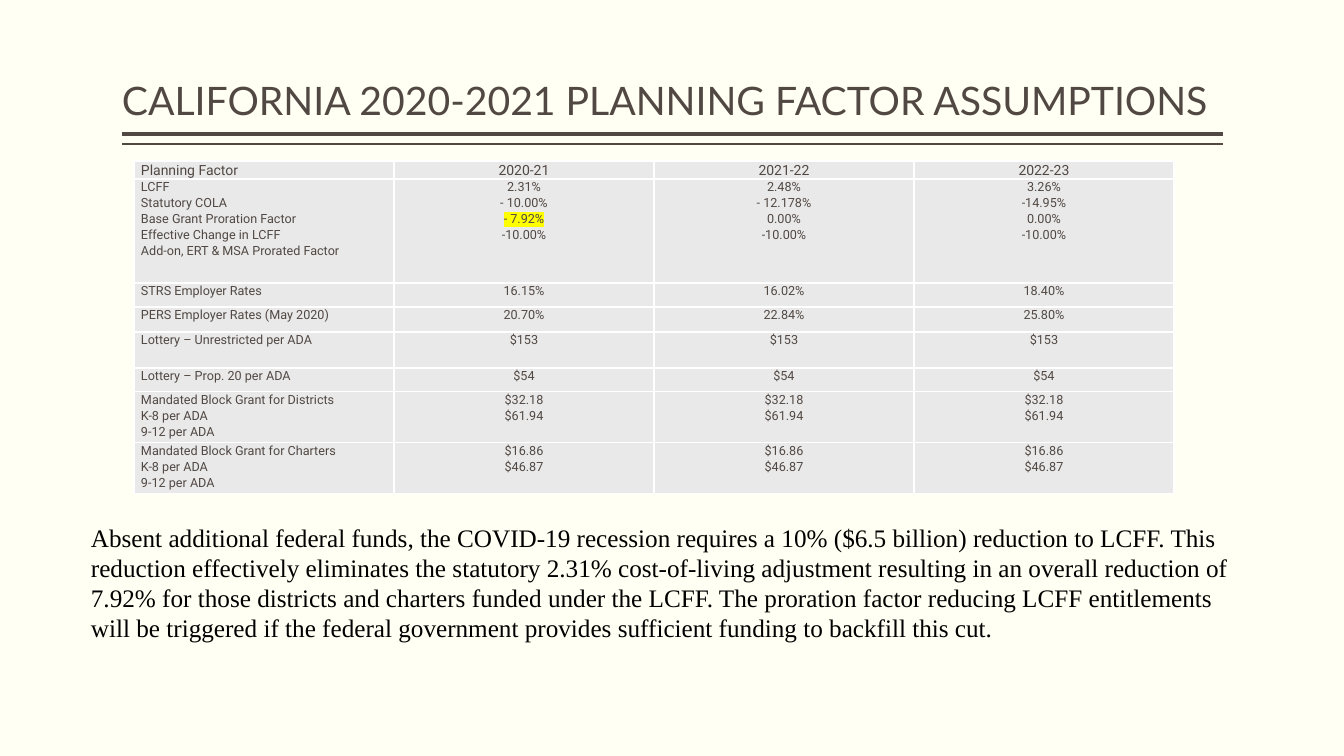
from dataclasses import dataclass

import pptx
import pptx.dml.color
import pptx.enum.shapes
import pptx.enum.text
import pptx.oxml
import pptx.oxml.ns
import pptx.util

SCALE = 12192000 / 1344  # EMU per px
COLORS = {"page": "FFFFF3", "ink": "514843", "cell": "E9E9E9",
          "border": "FFFFFF", "mark": "FFFF00", "body": "000000"}
ALIGN = pptx.enum.text.PP_ALIGN
ANCHOR = pptx.enum.text.MSO_ANCHOR
AUTO = pptx.enum.text.MSO_AUTO_SIZE


@dataclass
class Style:
    font: str
    size: int
    color: str
    spacing: float = 1.0


@dataclass
class TextBox:
    box: tuple[int, int, int, int]
    text: str
    style: Style
    frame: dict


@dataclass
class Rule:
    y: int
    width: int


@dataclass
class Row:
    height: int
    label: str
    values: list[str]
    size: int = 9


def px(n: int) -> pptx.util.Emu:
    return pptx.util.Emu(round(n * SCALE))


def rgb(name: str) -> pptx.dml.color.RGBColor:
    return pptx.dml.color.RGBColor.from_string(COLORS[name])


def set_all(obj, values: dict) -> None:
    for name, value in values.items():
        setattr(obj, name, value)


def solid_xml(tag: str, color: str, attrs: str = ""):
    ns = pptx.oxml.ns.nsdecls("a")
    return pptx.oxml.parse_xml(
        f'<a:{tag} {ns} {attrs}><a:solidFill><a:srgbClr val="{COLORS[color]}"/>'
        f'</a:solidFill></a:{tag}>')


def highlight(r) -> None:
    mark = pptx.oxml.parse_xml(
        f'<a:highlight {pptx.oxml.ns.nsdecls("a")}>'
        f'<a:srgbClr val="{COLORS["mark"]}"/></a:highlight>')
    r.font.fill._xPr.find(pptx.oxml.ns.qn("a:latin")).addprevious(mark)


def write(tf, text: str, style: Style, align=ALIGN.LEFT) -> None:
    for i, line in enumerate(text.split("\n")):
        p = tf.paragraphs[0] if i == 0 else tf.add_paragraph()
        set_all(p, {"alignment": align, "line_spacing": style.spacing})
        r = p.add_run()
        r.text = line
        set_all(r.font, {"name": style.font, "size": pptx.util.Pt(style.size)})
        r.font.color.rgb = rgb(style.color)
        if line == MARKED:
            highlight(r)


def add_text(s, item: TextBox) -> None:
    tf = s.shapes.add_textbox(*map(px, item.box)).text_frame
    set_all(tf, {"word_wrap": True, **item.frame})
    write(tf, item.text, item.style)


def add_rule(s, rule: Rule) -> None:
    sp = s.shapes.add_connector(pptx.enum.shapes.MSO_CONNECTOR.STRAIGHT,
                                px(1223), px(rule.y), px(122), px(rule.y))
    sp.line.color.rgb = rgb("ink")
    sp.line.width = pptx.util.Pt(rule.width)
    sp._element.spPr.append(pptx.oxml.parse_xml(
        f'<a:effectLst {pptx.oxml.ns.nsdecls("a")}/>'))


def add_factor_table(s, rows: list[Row]) -> None:
    height = sum(row.height for row in rows)
    table = s.shapes.add_table(len(rows), 4, px(134), px(161),
                               px(4 * COLUMN), px(height)).table
    set_all(table, {"first_row": False, "horz_banding": False})
    for column in table.columns:
        column.width = px(COLUMN)
    for i, row in enumerate(rows):
        table.rows[i].height = px(row.height)
        style = Style("Roboto", row.size, "ink", 1.07)
        for j, text in enumerate([row.label, *row.values]):
            cell = table.cell(i, j)
            set_all(cell, {"margin_left": px(7), "margin_right": px(7),
                           "margin_top": 0, "margin_bottom": 0})
            tc_pr = cell._tc.get_or_add_tcPr()
            for side in "LRTB":
                tc_pr.append(solid_xml(f"ln{side}", "border", 'w="12700"'))
            cell.fill.solid()
            cell.fill.fore_color.rgb = rgb("cell")
            write(cell.text_frame, text, style, ALIGN.CENTER if j else ALIGN.LEFT)


COLUMN = 260
MARKED = "- 7.92%"

TITLE = TextBox(
    (122, 8, 1101, 121), "CALIFORNIA 2020-2021 PLANNING FACTOR ASSUMPTIONS",
    Style("Lato", 28, "ink", 0.9),
    {"vertical_anchor": ANCHOR.BOTTOM, "margin_left": 0, "margin_right": 0})

RULES = [Rule(134, 3), Rule(144, 1)]

ROWS = [
    Row(18, "Planning Factor", ["2020-21", "2021-22", "2022-23"], 10),
    Row(104, "LCFF\nStatutory COLA\nBase Grant Proration Factor\n"
        "Effective Change in LCFF\nAdd-on, ERT & MSA Prorated Factor",
        [f"2.31%\n- 10.00%\n{MARKED}\n-10.00%",
         "2.48%\n- 12.178%\n0.00%\n-10.00%",
         "3.26%\n-14.95%\n0.00%\n-10.00%"]),
    Row(24, "STRS Employer Rates", ["16.15%", "16.02%", "18.40%"]),
    Row(25, "PERS Employer Rates (May 2020)", ["20.70%", "22.84%", "25.80%"]),
    Row(36, "Lottery – Unrestricted per ADA", ["$153"] * 3),
    Row(24, "Lottery – Prop. 20 per ADA", ["$54"] * 3),
    *(Row(51, f"Mandated Block Grant for {group}\nK-8 per ADA\n9-12 per ADA",
          [amounts] * 3)
      for group, amounts in [("Districts", "$32.18\n$61.94"),
                             ("Charters", "$16.86\n$46.87")]),
]

SUMMARY = TextBox(
    (81, 517, 1182, 132),
    "Absent additional federal funds, the COVID-19 recession requires a 10% "
    "($6.5 billion) reduction to LCFF. This reduction effectively eliminates "
    "the statutory 2.31% cost-of-living adjustment resulting in an overall "
    "reduction of 7.92% for those districts and charters funded under the "
    "LCFF. The proration factor reducing LCFF entitlements will be triggered "
    "if the federal government provides sufficient funding to backfill this cut.",
    Style("Times New Roman", 18, "body"),
    {"auto_size": AUTO.SHAPE_TO_FIT_TEXT})


def main() -> None:
    prs = pptx.Presentation()
    set_all(prs, {"slide_width": px(1344), "slide_height": px(756)})
    s = prs.slides.add_slide(prs.slide_layouts[6])
    s.background.fill.solid()
    s.background.fill.fore_color.rgb = rgb("page")

    # Heading with its double rule
    for rule in RULES:
        add_rule(s, rule)
    add_text(s, TITLE)

    # Planning factors and summary
    add_factor_table(s, ROWS)
    add_text(s, SUMMARY)
    prs.save("out.pptx")


if __name__ == "__main__":
    main()
